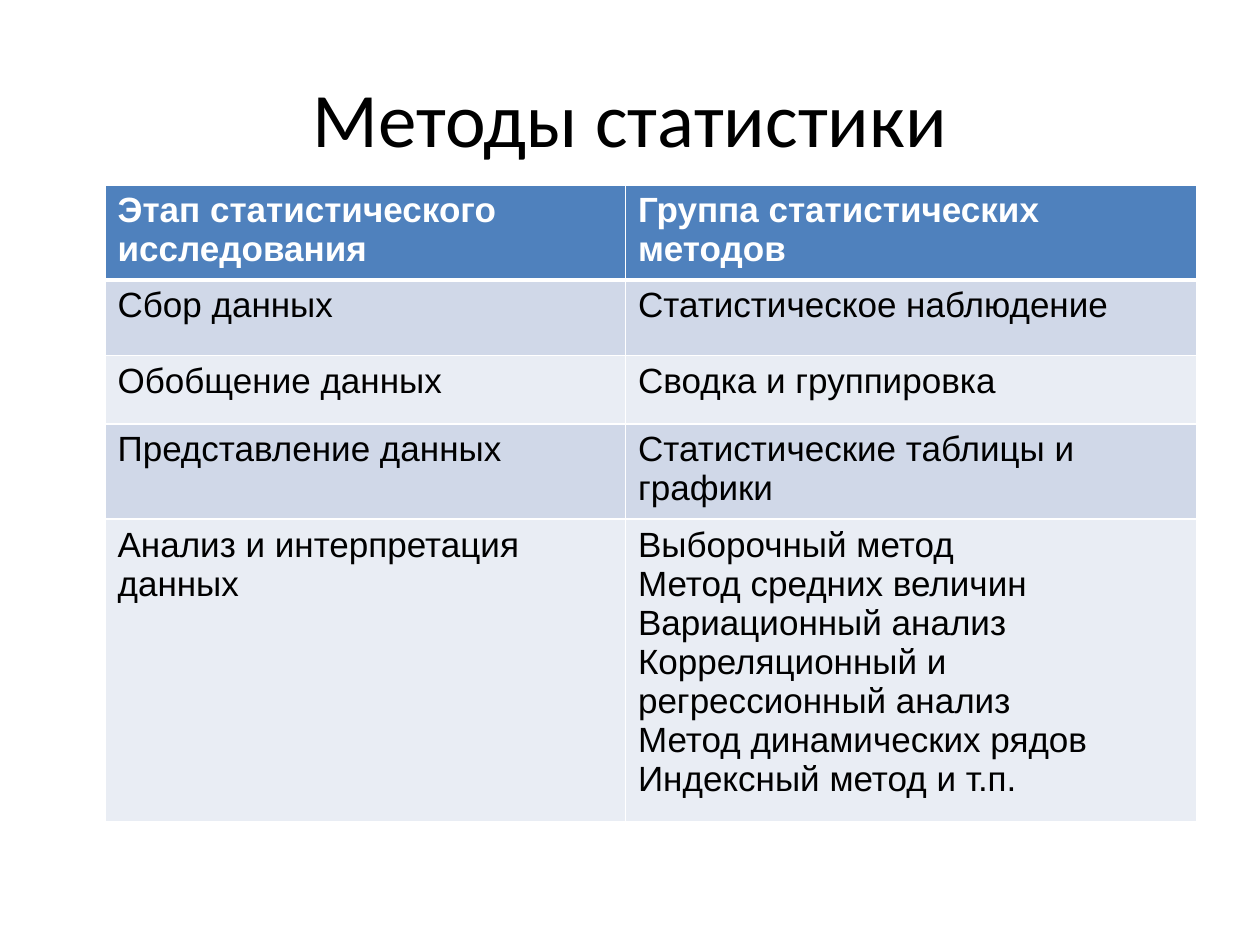
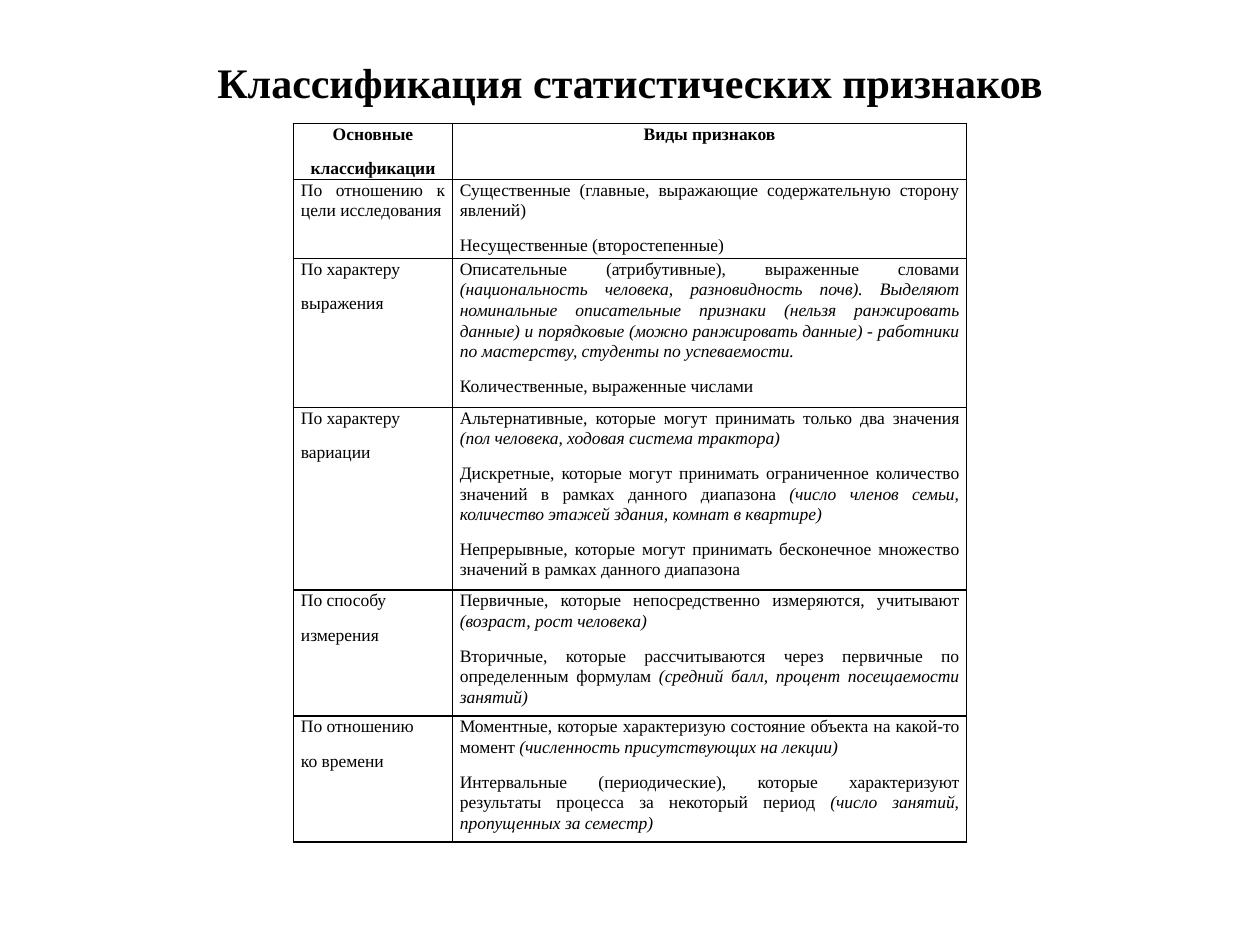
from lxml.etree import SubElement
from pptx import Presentation
from pptx.dml.color import RGBColor
from pptx.enum.text import MSO_ANCHOR, MSO_AUTO_SIZE, PP_ALIGN
from pptx.oxml.ns import qn
from pptx.util import Pt

BLACK = RGBColor(0x00, 0x00, 0x00)
WHITE = RGBColor(0xFF, 0xFF, 0xFF)
HEADER_BLUE = RGBColor(0x4F, 0x81, 0xBD)
BAND_DARK = RGBColor(0xD0, 0xD8, 0xE8)
BAND_LIGHT = RGBColor(0xE9, 0xED, 0xF4)

TITLE_ONLY = 5
ITALIC_MARK = "|"  # text after the mark is set in italics

METHODS = [
    (["Этап статистического исследования"], ["Группа статистических методов"]),
    (["Сбор данных"], ["Статистическое наблюдение"]),
    (["Обобщение данных"], ["Сводка и группировка"]),
    (["Представление данных"], ["Статистические таблицы и графики"]),
    (["Анализ и интерпретация данных"],
     ["Выборочный метод",
      "Метод средних величин",
      "Вариационный анализ",
      "Корреляционный и регрессионный анализ",
      "Метод динамических рядов",
      "Индексный метод и т.п."]),
]

FEATURES = [
    (["Основные", "классификации"], ["Виды признаков"]),
    (["По отношению к цели исследования"],
     ["Существенные (главные, выражающие содержательную сторону явлений)",
      "Несущественные (второстепенные)"]),
    (["По характеру", "выражения"],
     ["Описательные (атрибутивные), выраженные словами |(национальность человека, "
      "разновидность почв). Выделяют номинальные описательные признаки (нельзя "
      "ранжировать данные) и порядковые (можно ранжировать данные) - работники "
      "по мастерству, студенты по успеваемости.",
      "Количественные, выраженные числами"]),
    (["По характеру", "вариации"],
     ["Альтернативные, которые могут принимать только два значения "
      "|(пол человека, ходовая система трактора)",
      "Дискретные, которые могут принимать ограниченное количество значений в рамках "
      "данного диапазона |(число членов семьи, количество этажей здания, комнат в квартире)",
      "Непрерывные, которые могут принимать бесконечное множество значений "
      "в рамках данного диапазона"]),
    (["По способу", "измерения"],
     ["Первичные, которые непосредственно измеряются, учитывают |(возраст, рост человека)",
      "Вторичные, которые рассчитываются через первичные по определенным формулам "
      "|(средний балл, процент посещаемости занятий)"]),
    (["По отношению", "ко времени"],
     ["Моментные, которые характеризую состояние объекта на какой-то момент "
      "|(численность присутствующих на лекции)",
      "Интервальные (периодические), которые характеризуют результаты процесса "
      "за некоторый период |(число занятий, пропущенных за семестр)"]),
]


def apply(target, values):
    for name, value in values.items():
        setattr(target, name, value)


class SlideBuilder:
    """Holds the deck, the current page and the shared style."""

    def __init__(self):
        self.deck = Presentation()
        apply(self.deck, {"slide_width": Pt(720), "slide_height": Pt(540)})
        self.page = None

    def add_page(self):
        self.page = self.deck.slides.add_slide(self.deck.slide_layouts[TITLE_ONLY])

    def fill_para(self, para, text, font, color, layout):
        apply(para, layout)
        for index, part in enumerate(text.split(ITALIC_MARK)):
            span = para.add_run()
            span.text = part
            apply(span.font, {**font, "italic": index == 1})
            span.font.color.rgb = color

    def add_title(self, text, height, font):
        box = self.page.shapes.title
        apply(box, {"left": Pt(36), "top": Pt(21.6), "width": Pt(648), "height": Pt(height)})
        apply(box.text_frame, {"word_wrap": True, "auto_size": MSO_AUTO_SIZE.NONE,
                               "vertical_anchor": MSO_ANCHOR.MIDDLE})
        self.fill_para(box.text_frame.paragraphs[0], text, font, BLACK,
                       {"alignment": PP_ALIGN.CENTER})

    def add_borders(self, cell, color, widths):
        properties = cell._tc.get_or_add_tcPr()
        for side, width in zip("LRTB", widths):
            line = SubElement(properties, qn(f"a:ln{side}"), w=str(Pt(width)))
            fill = SubElement(line, qn("a:solidFill"))
            SubElement(fill, qn("a:srgbClr"), val=str(color))

    def add_table(self, rows, left, top, widths, heights, style):
        frame = self.page.shapes.add_table(len(rows), len(widths), Pt(left), Pt(top),
                                           Pt(sum(widths)), Pt(sum(heights)))
        table = frame.table
        apply(table, {"first_row": False, "horz_banding": False})
        for column, width in zip(table.columns, widths):
            column.width = Pt(width)
        for row, height in zip(table.rows, heights):
            row.height = Pt(height)
        for row_index, row in enumerate(rows):
            for column_index, texts in enumerate(row):
                self.fill_cell(table.cell(row_index, column_index), texts, row_index, style)

    def fill_cell(self, cell, texts, row_index, style):
        is_header = row_index == 0
        apply(cell, style["margins"])

        # Borders come before the fill; the header rule may be heavier
        top_width = style["header_rule"] if row_index == 1 else 1
        bottom_width = style["header_rule"] if is_header else 1
        self.add_borders(cell, style["border"], (1, 1, top_width, bottom_width))
        if style["bands"]:
            cell.fill.solid()
            cell.fill.fore_color.rgb = (HEADER_BLUE if is_header
                                        else style["bands"][(row_index - 1) % 2])
        else:
            cell.fill.background()

        # Text, one paragraph per entry
        color = style["header_color"] if is_header else BLACK
        layout = {**style["layout"],
                  "alignment": style["header_align"] if is_header else style["body_align"]}
        frame = cell.text_frame
        for index, text in enumerate(texts):
            para = frame.paragraphs[0] if index == 0 else frame.add_paragraph()
            self.fill_para(para, text, {**style["font"], "bold": is_header}, color, layout)


BANDED = {
    "font": {"name": "Arial", "size": Pt(20)},
    "margins": {},
    "layout": {},
    "header_align": PP_ALIGN.LEFT,
    "body_align": PP_ALIGN.LEFT,
    "header_color": WHITE,
    "header_rule": 3,
    "border": WHITE,
    "bands": (BAND_DARK, BAND_LIGHT),
}

RULED = {
    "font": {"name": "Times New Roman", "size": Pt(10)},
    "margins": {"margin_left": Pt(4.3), "margin_right": Pt(4.3),
                "margin_top": Pt(0), "margin_bottom": Pt(0)},
    "layout": {"line_spacing": 1.07, "space_after": Pt(8)},
    "header_align": PP_ALIGN.CENTER,
    "body_align": PP_ALIGN.JUSTIFY,
    "header_color": BLACK,
    "header_rule": 1,
    "border": BLACK,
    "bands": None,
}


def main():
    builder = SlideBuilder()

    # Statistical methods by research stage
    builder.add_page()
    builder.add_title("Методы статистики", 90, {"name": "Calibri", "size": Pt(44)})
    builder.add_table(METHODS, 60, 105.6, (297.4, 326.6),
                      (54.4, 43.3, 39, 54.4, 173), BANDED)

    # Classification of statistical features
    builder.add_page()
    builder.add_title("Классификация статистических признаков", 49.6,
                      {"name": "Times New Roman", "size": Pt(24), "bold": True})
    builder.add_table(FEATURES, 167.7, 70.5, (90.8, 293.8),
                      (32, 45.1, 85.2, 104.4, 72, 72), RULED)

    builder.deck.save("out.pptx")


if __name__ == "__main__":
    main()
